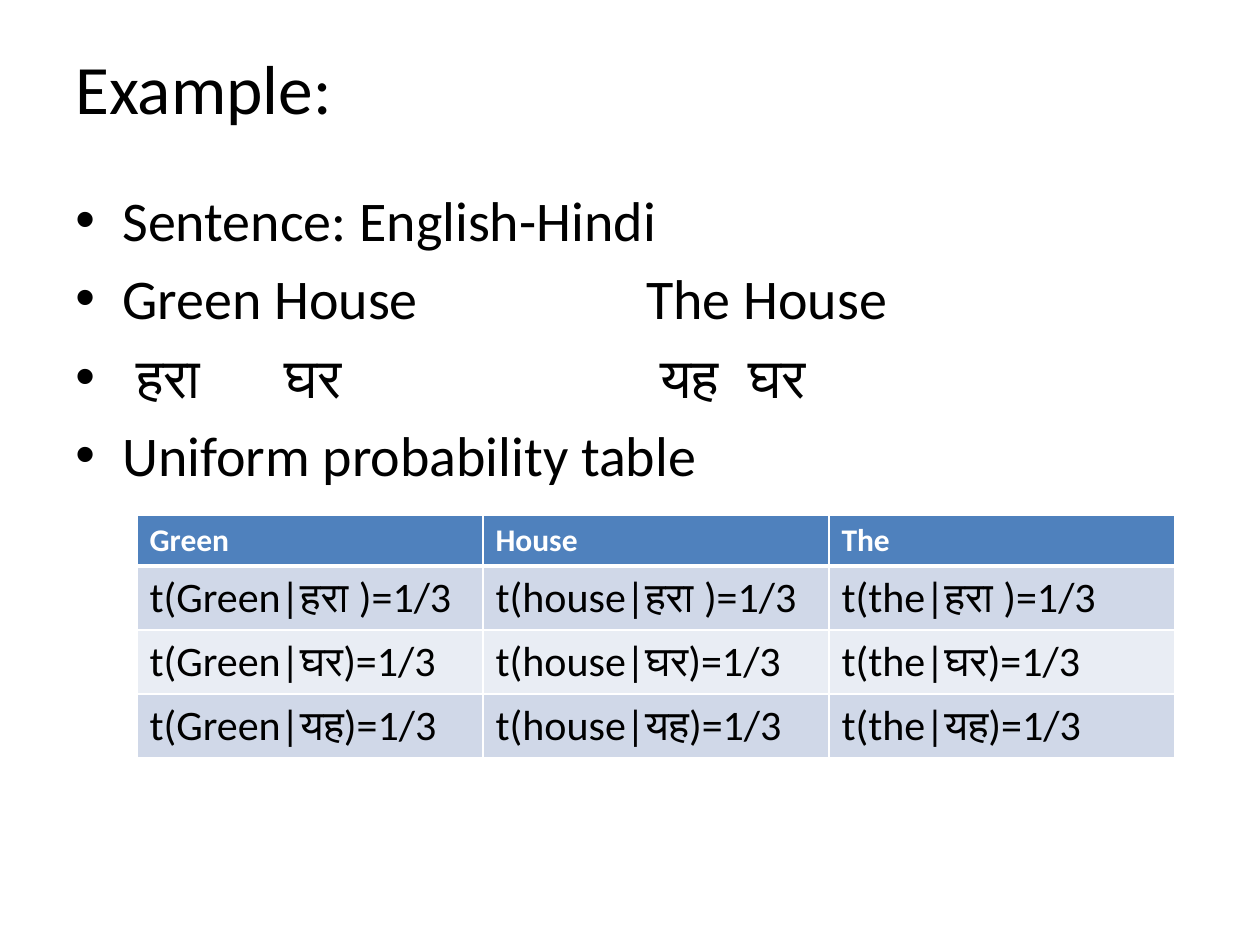
from lxml import etree
from pptx import Presentation
from pptx.dml.color import RGBColor
from pptx.enum.text import MSO_ANCHOR
from pptx.oxml.ns import qn
from pptx.util import Emu, Pt

MIDDLE, TOP = MSO_ANCHOR.MIDDLE, MSO_ANCHOR.TOP
SCALE = 914400 // 126
FONT = "Calibri"
BLACK, WHITE, HEADER_FILL = "000000", "FFFFFF", "4F81BD"
BAND_FILLS = ["D0D8E8", "E9EDF4"]

TITLE = "Example:"
BULLETS = [
    "Sentence: English-Hindi",
    "Green House\t\tThe House",
    " हरा\tघर\t\t यह\tघर",
    "Uniform probability table",
]
HEADERS = ["Green", "House", "The"]
ENGLISH = ["Green", "house", "the"]
HINDI = ["हरा ", "घर", "यह"]
ROWS = [[f"t({english}|{hindi})=1/3" for english in ENGLISH] for hindi in HINDI]

INDENT = 47
TAB_STOPS = [209, 384, 571, 673]
TABLE_LEFT, TABLE_TOP, COLUMN_WIDTH = 137, 515, 346
HEADER_HEIGHT, ROW_HEIGHT = 51, 64


def px(length):
    """Turn px into EMU."""
    return Emu(length * SCALE)


def color(value):
    """Turn a hex string into a colour."""
    return RGBColor.from_string(value)


def format_runs(paragraph, size, fill, bold=False):
    """Set the font of every run of a paragraph."""
    for run in paragraph.runs:
        run.font.name = FONT
        run.font.size = Pt(size)
        run.font.bold = bold
        run.font.color.rgb = color(fill)


def add_text(slide, box, text, size, anchor):
    """Add a wrapped text box and return its text frame."""
    text_frame = slide.shapes.add_textbox(*map(px, box)).text_frame
    text_frame.word_wrap = True
    text_frame.vertical_anchor = anchor
    text_frame.text = text
    for paragraph in text_frame.paragraphs:
        format_runs(paragraph, size, BLACK)
    return text_frame


def set_bullet(paragraph):
    """Give a paragraph a bullet, a hanging indent and tab stops."""
    properties = paragraph._p.get_or_add_pPr()
    properties.set("marL", str(px(INDENT)))
    properties.set("indent", str(px(-INDENT)))
    properties.set("defTabSz", str(px(126)))
    spacing = etree.SubElement(properties, qn("a:spcBef"))
    etree.SubElement(spacing, qn("a:spcPct"), val="20000")
    etree.SubElement(properties, qn("a:buFont"), typeface="Arial")
    etree.SubElement(properties, qn("a:buChar"), char="•")
    tabs = etree.SubElement(properties, qn("a:tabLst"))
    for stop in TAB_STOPS:
        etree.SubElement(tabs, qn("a:tab"), pos=str(px(stop)), algn="l")


def set_borders(cell, bottom, top):
    """Draw white borders around a cell."""
    properties = cell._tc.get_or_add_tcPr()
    widths = {"a:lnL": 1, "a:lnR": 1, "a:lnT": top, "a:lnB": bottom}
    for index, (side, width) in enumerate(widths.items()):
        line = etree.Element(qn(side), w=str(Pt(width)))
        fill = etree.SubElement(line, qn("a:solidFill"))
        etree.SubElement(fill, qn("a:srgbClr"), val=WHITE)
        properties.insert(index, line)


def add_probability_table(slide):
    """Add the table of translation probabilities."""
    content = [HEADERS] + ROWS
    heights = [HEADER_HEIGHT] + [ROW_HEIGHT] * len(ROWS)
    box = (TABLE_LEFT, TABLE_TOP, COLUMN_WIDTH * len(HEADERS), sum(heights))
    table = slide.shapes.add_table(len(content), len(HEADERS), *map(px, box)).table
    for column in table.columns:
        column.width = px(COLUMN_WIDTH)
    for row_index, texts in enumerate(content):
        header = row_index == 0
        table.rows[row_index].height = px(heights[row_index])
        for column_index, text in enumerate(texts):
            cell = table.cell(row_index, column_index)
            cell.text = text
            cell.fill.solid()
            fill = HEADER_FILL if header else BAND_FILLS[(row_index - 1) % 2]
            cell.fill.fore_color.rgb = color(fill)
            set_borders(cell, 3 if header else 1, 3 if row_index == 1 else 1)
            style = (18, WHITE, True) if header else (24, BLACK, False)
            format_runs(cell.text_frame.paragraphs[0], *style)


def main():
    """Build the slide and save it."""
    presentation = Presentation()
    presentation.slide_width, presentation.slide_height = px(1260), px(945)
    slide = presentation.slides.add_slide(presentation.slide_layouts[6])
    add_text(slide, (63, 38, 1134, 98), TITLE, 39.6, MIDDLE)
    body = add_text(slide, (63, 179, 1134, 665), "\n".join(BULLETS), 32, TOP)
    for paragraph in body.paragraphs:
        set_bullet(paragraph)
    add_probability_table(slide)
    presentation.save("out.pptx")


if __name__ == "__main__":
    main()
